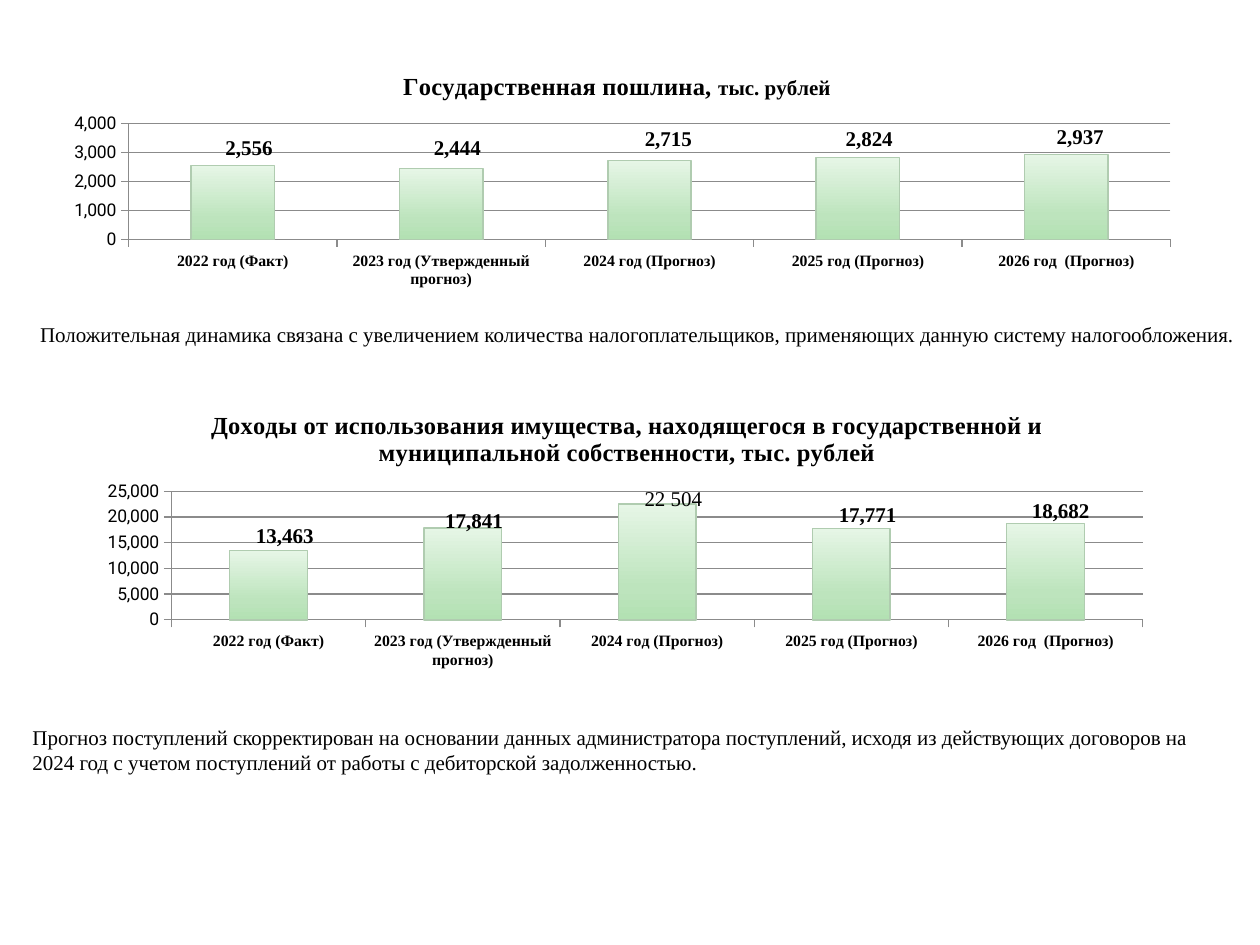
import pptx
import pptx.chart.data
import pptx.dml.color
import pptx.enum.chart
import pptx.enum.text
import pptx.oxml
import pptx.oxml.ns
import pptx.util

Inches = pptx.util.Inches
Pt = pptx.util.Pt
SERIF = "Times New Roman"
SANS = "Roboto"
COLORS = {"text": "000000", "axis": "8B8B8B", "bar_line": "B0CCB0",
          "bar_top": "E6F6E6", "bar_middle": "BDE4BD", "bar_bottom": "B3E1B3"}
BAR_STOPS = [(0, "bar_top"), (72, "bar_middle"), (100, "bar_bottom")]
CATEGORIES = ["2022 год (Факт)", "2023 год (Утвержденный прогноз)", "2024 год (Прогноз)",
              "2025 год (Прогноз)", "2026 год  (Прогноз)"]

# All places, including those inside a chart, are in inches.
CHARTS = [
    {"at": (0.23, 3.2, 9.53, 2.42), "plot": (1.13, 0.7, 7.71, 1.02),
     "title": [("Доходы от использования имущества, находящегося в государственной и "
                "муниципальной собственности, тыс. рублей", 14)],
     "title_at": (1.41, 0.01), "values": [13463, 17841, 22504, 17771, 18682],
     "maximum": 25000, "step": 5000, "custom_labels": {2: "22 504"},
     "label_shifts": [(0.13, -0.39), (0.09, -0.42), (0.13, -0.5), (0.13, -0.47), (0.12, -0.48)]},
    {"at": (0.31, 0.39, 9.69, 2.19), "plot": (0.71, 0.59, 8.27, 0.92),
     "title": [("Государственная пошлина, ", 14), ("тыс. рублей", 12)],
     "title_at": (2.86, 0.14), "values": [2556, 2444, 2715, 2824, 2937],
     "maximum": 4000, "step": 1000, "custom_labels": {},
     "label_shifts": [(0.13, -0.43), (0.13, -0.44), (0.15, -0.48), (0.09, -0.47), (0.11, -0.47)]},
]
NOTES = [
    {"at": (0.16, 5.7, 9.84, 0.5), "wrap": True, "lines": [
        "Прогноз поступлений скорректирован на основании данных администратора поступлений, "
        "исходя из действующих договоров на",
        "2024 год с учетом поступлений от работы с дебиторской задолженностью."]},
    {"at": (0.22, 2.5, 9.78, 0.3), "wrap": False, "lines": [
        "Положительная динамика связана с увеличением количества налогоплательщиков, "
        "применяющих данную систему налогообложения."]},
]


def style_font(font, size, name=SERIF, bold=False):
    font.name = name
    font.size = Pt(size)
    font.bold = bold
    font.color.rgb = pptx.dml.color.RGBColor.from_string(COLORS["text"])


def make_layout(position, chart_size, edge=False, inner=False):
    """Return a c:layout element, turning inches into shares of the chart."""
    parts = ['<c:layoutTarget val="inner"/>'] if inner else []
    if edge:
        parts += ['<c:xMode val="edge"/>', '<c:yMode val="edge"/>']
    parts += [f'<c:{key} val="{length / total:.4f}"/>'
              for key, length, total in zip("xywh", position, chart_size * 2)]
    return pptx.oxml.parse_xml(
        f'<c:layout {pptx.oxml.ns.nsdecls("c")}><c:manualLayout>'
        f'{"".join(parts)}</c:manualLayout></c:layout>')


presentation = pptx.Presentation()
presentation.slide_width = Inches(10)
presentation.slide_height = Inches(7.5)
slide = presentation.slides.add_slide(presentation.slide_layouts[6])

for settings in CHARTS:
    chart_data = pptx.chart.data.CategoryChartData(number_format="#,##0")
    chart_data.categories = CATEGORIES
    chart_data.add_series("Series 1", settings["values"])
    chart = slide.shapes.add_chart(
        pptx.enum.chart.XL_CHART_TYPE.COLUMN_STACKED,
        *map(Inches, settings["at"]), chart_data).chart
    chart_size = settings["at"][2:]
    style_font(chart.font, 18, SANS)
    chart.has_legend = False

    title_paragraph = chart.chart_title.text_frame.paragraphs[0]
    for text, size in settings["title"]:
        run = title_paragraph.add_run()
        run.text = text
        style_font(run.font, size, bold=True)
    chart.chart_title.include_in_layout = False
    for old_layout in chart.element.xpath("c:chart/c:title/c:layout"):
        old_layout.getparent().remove(old_layout)
    chart.element.xpath("c:chart/c:title/c:tx")[0].addnext(
        make_layout(settings["title_at"], chart_size, edge=True))

    plot_area = chart.element.xpath("c:chart/c:plotArea")[0]
    for old_layout in plot_area.xpath("c:layout"):
        plot_area.remove(old_layout)
    plot_area.insert(0, make_layout(settings["plot"], chart_size, edge=True, inner=True))

    category_axis, value_axis = chart.category_axis, chart.value_axis
    style_font(category_axis.tick_labels.font, 9, bold=True)
    style_font(value_axis.tick_labels.font, 10, SANS)
    value_axis.tick_labels.number_format = "#,##0"
    value_axis.tick_labels.number_format_is_linked = False
    value_axis.minimum_scale = 0
    value_axis.maximum_scale = settings["maximum"]
    value_axis.major_unit = settings["step"]
    value_axis.has_major_gridlines = True
    for axis in (category_axis, value_axis):
        axis.major_tick_mark = pptx.enum.chart.XL_TICK_MARK.OUTSIDE
    for part in (category_axis, value_axis, value_axis.major_gridlines):
        part.format.line.color.rgb = pptx.dml.color.RGBColor.from_string(COLORS["axis"])
        part.format.line.width = Pt(0.75)

    plot = chart.plots[0]
    plot.vary_by_categories = False
    plot.gap_width = 150
    plot.overlap = 100
    series = plot.series[0]
    series.format.line.color.rgb = pptx.dml.color.RGBColor.from_string(COLORS["bar_line"])
    series.format.line.width = Pt(0.79)
    series.format.fill.gradient()
    series.format.fill.gradient_angle = 270
    stop_list = plot_area.xpath(".//c:ser/c:spPr/a:gradFill/a:gsLst")[0]
    for old_stop in list(stop_list):
        stop_list.remove(old_stop)
    for percent, color in BAR_STOPS:
        stop_list.append(pptx.oxml.parse_xml(
            f'<a:gs {pptx.oxml.ns.nsdecls("a")} pos="{percent * 1000}">'
            f'<a:srgbClr val="{COLORS[color]}"/></a:gs>'))

    labels = series.data_labels
    labels.show_value = True
    labels.number_format = "#,##0"
    labels.number_format_is_linked = False
    style_font(labels.font, 12, bold=True)
    for index in range(len(CATEGORIES)):
        label = series.points[index].data_label
        if index in settings["custom_labels"]:
            run = label.text_frame.paragraphs[0].add_run()
            run.text = settings["custom_labels"][index]
            style_font(run.font, 12)
        else:
            style_font(label.font, 12, bold=True)
    for label_element, shift in zip(plot_area.xpath(".//c:dLbl"), settings["label_shifts"]):
        label_element.xpath("c:idx")[0].addnext(make_layout(shift, chart_size))

    # Moved labels get no leader lines: off in the base schema and in its 2012 extension.
    labels_element = plot_area.xpath(".//c:ser/c:dLbls")[0]
    for leader_lines in labels_element.xpath("c:showLeaderLines"):
        leader_lines.set("val", "0")
    labels_element.append(pptx.oxml.parse_xml(
        f'<c:extLst {pptx.oxml.ns.nsdecls("c")}>'
        '<c:ext uri="{CE6537A1-D6FC-4f65-9D91-7224C49458BB}" '
        'xmlns:c15="http://schemas.microsoft.com/office/drawing/2012/chart">'
        '<c15:showLeaderLines val="0"/></c:ext></c:extLst>'))

for note in NOTES:
    text_frame = slide.shapes.add_textbox(*map(Inches, note["at"])).text_frame
    text_frame.word_wrap = note["wrap"]
    text_frame.auto_size = pptx.enum.text.MSO_AUTO_SIZE.SHAPE_TO_FIT_TEXT
    for index, line in enumerate(note["lines"]):
        paragraph = text_frame.add_paragraph() if index else text_frame.paragraphs[0]
        run = paragraph.add_run()
        run.text = line
        style_font(run.font, 12)

presentation.save("out.pptx")
